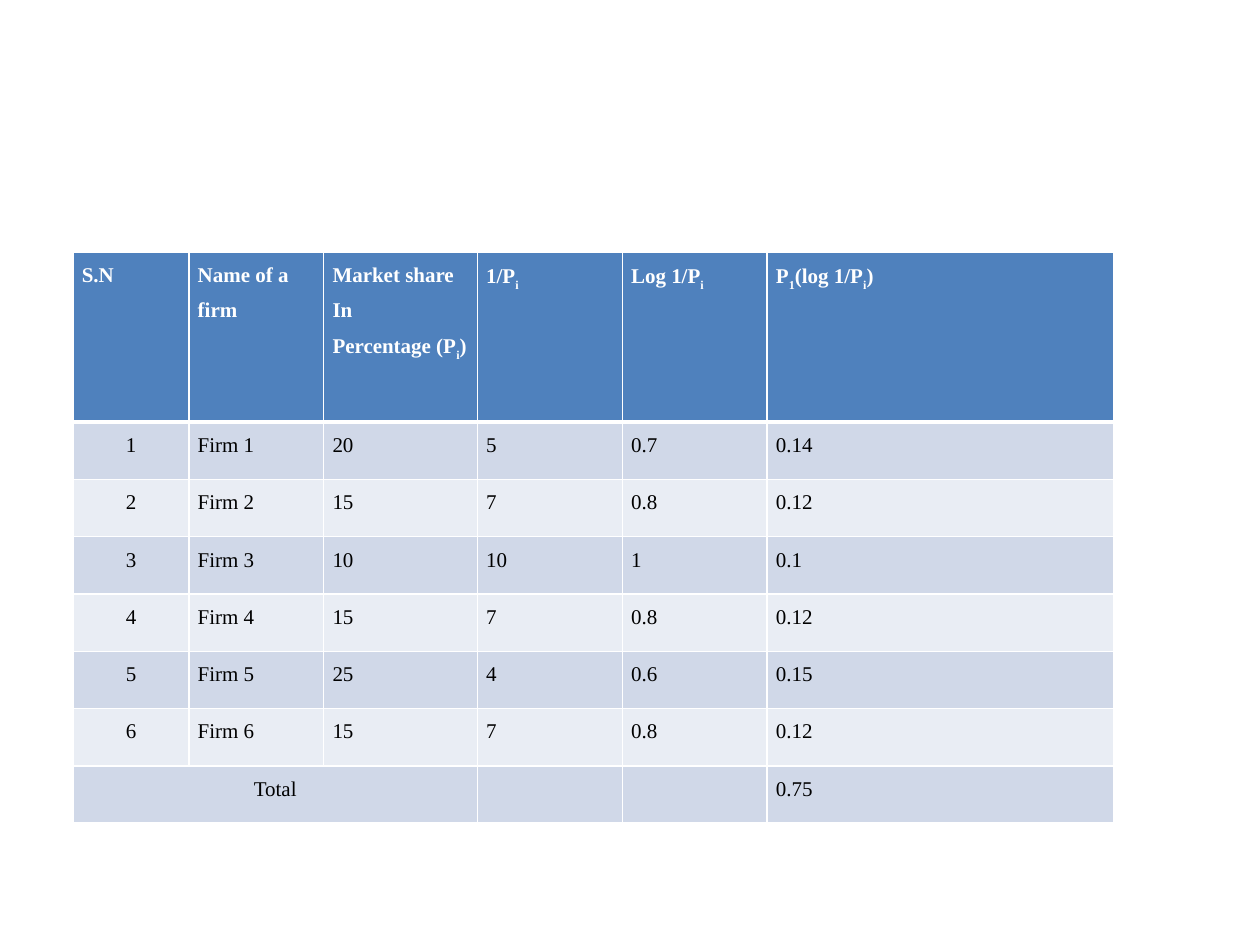
from dataclasses import dataclass

from lxml import etree
from pptx import Presentation
from pptx import util as u
from pptx.dml.color import RGBColor
from pptx.enum import text
from pptx.oxml.ns import qn

WHITE, BLACK = "FFFFFF", "000000"
HEADER_FILL, BANDS = "4F81BD", ("D0D8E8", "E9EDF4")
CENTER, JUSTIFY = text.PP_ALIGN.CENTER, text.PP_ALIGN.JUSTIFY


@dataclass
class RowStyle:
    fill: str
    ink: str
    bold: bool = False
    top: float = 1
    bottom: float = 1


@dataclass
class Column:
    heading: str  # underscores enclose subscripts, line breaks part paragraphs
    width: float


COLUMNS = [
    Column("S.N", 0.92),
    Column("Name of a\nfirm", 1.07),
    Column("Market share\nIn\nPercentage (P_i_)", 1.22),
    Column("1/P_i_", 1.15),
    Column("Log 1/P_i_", 1.15),
    Column("P_1_(log 1/P_i_)", 2.75),
]
# Market share, its inverse, the log of that, and the weighted log
FIRMS = [
    ("20", "5", "0.7", "0.14"),
    ("15", "7", "0.8", "0.12"),
    ("10", "10", "1", "0.1"),
    ("15", "7", "0.8", "0.12"),
    ("25", "4", "0.6", "0.15"),
    ("15", "7", "0.8", "0.12"),
]
TOTAL = ("Total", "", "", "", "", "0.75")
HEADER_HEIGHT, ROW_HEIGHT = 1.35, 0.455


def color(value: str) -> RGBColor:
    return RGBColor.from_string(value)


def add_borders(cell, style: RowStyle) -> None:
    properties = cell._tc.get_or_add_tcPr()
    widths = {"lnL": 1, "lnR": 1, "lnT": style.top, "lnB": style.bottom}
    for side, points in widths.items():
        line = etree.SubElement(properties, qn(f"a:{side}"), w=str(u.Pt(points)))
        fill = etree.SubElement(line, qn("a:solidFill"))
        etree.SubElement(fill, qn("a:srgbClr"), val=WHITE)


def write_paragraph(paragraph, words: str, style: RowStyle, align) -> None:
    paragraph.alignment = align
    paragraph.line_spacing = 1.5
    font = paragraph.font
    font.name, font.size, font.bold = "Times New Roman", u.Pt(12), style.bold
    font.color.rgb = color(style.ink)
    for index, part in enumerate(words.split("_")):
        if part:
            run = paragraph.add_run()
            run.text = part
            if index % 2:
                run._r.get_or_add_rPr().set("baseline", "-25000")


def fill_cell(cell, words: str, style: RowStyle, align) -> None:
    add_borders(cell, style)
    cell.fill.solid()
    cell.fill.fore_color.rgb = color(style.fill)
    cell.margin_left = cell.margin_right = u.Inches(0.07)
    cell.margin_top = cell.margin_bottom = 0
    frame = cell.text_frame
    for index, line in enumerate(words.split("\n")):
        paragraph = frame.add_paragraph() if index else frame.paragraphs[0]
        write_paragraph(paragraph, line, style, align)


def fill_row(table, row: int, values, style: RowStyle) -> None:
    for column, words in enumerate(values):
        align = CENTER if row and column == 0 else JUSTIFY
        fill_cell(table.cell(row, column), words, style, align)


def build() -> None:
    deck = Presentation()
    deck.slide_width, deck.slide_height = u.Inches(10), u.Inches(7.5)
    slide = deck.slides.add_slide(deck.slide_layouts[6])

    # Table grid
    body = [(str(n), f"Firm {n}", *values) for n, values in enumerate(FIRMS, 1)]
    body.append(TOTAL)
    width = sum(column.width for column in COLUMNS)
    height = HEADER_HEIGHT + ROW_HEIGHT * len(body)
    table = slide.shapes.add_table(
        len(body) + 1, len(COLUMNS),
        u.Inches(0.58), u.Inches(2), u.Inches(width), u.Inches(height),
    ).table
    for grid_column, column in zip(table.columns, COLUMNS):
        grid_column.width = u.Inches(column.width)
    for index, grid_row in enumerate(table.rows):
        grid_row.height = u.Inches(ROW_HEIGHT if index else HEADER_HEIGHT)

    # Headings
    header = RowStyle(HEADER_FILL, WHITE, bold=True, bottom=3)
    fill_row(table, 0, [column.heading for column in COLUMNS], header)

    # Firms and total, in alternating bands
    for index, values in enumerate(body):
        style = RowStyle(BANDS[index % 2], BLACK, top=1 if index else 3)
        fill_row(table, index + 1, values, style)
    table.cell(len(body), 0).merge(table.cell(len(body), 2))

    deck.save("out.pptx")


if __name__ == "__main__":
    build()
